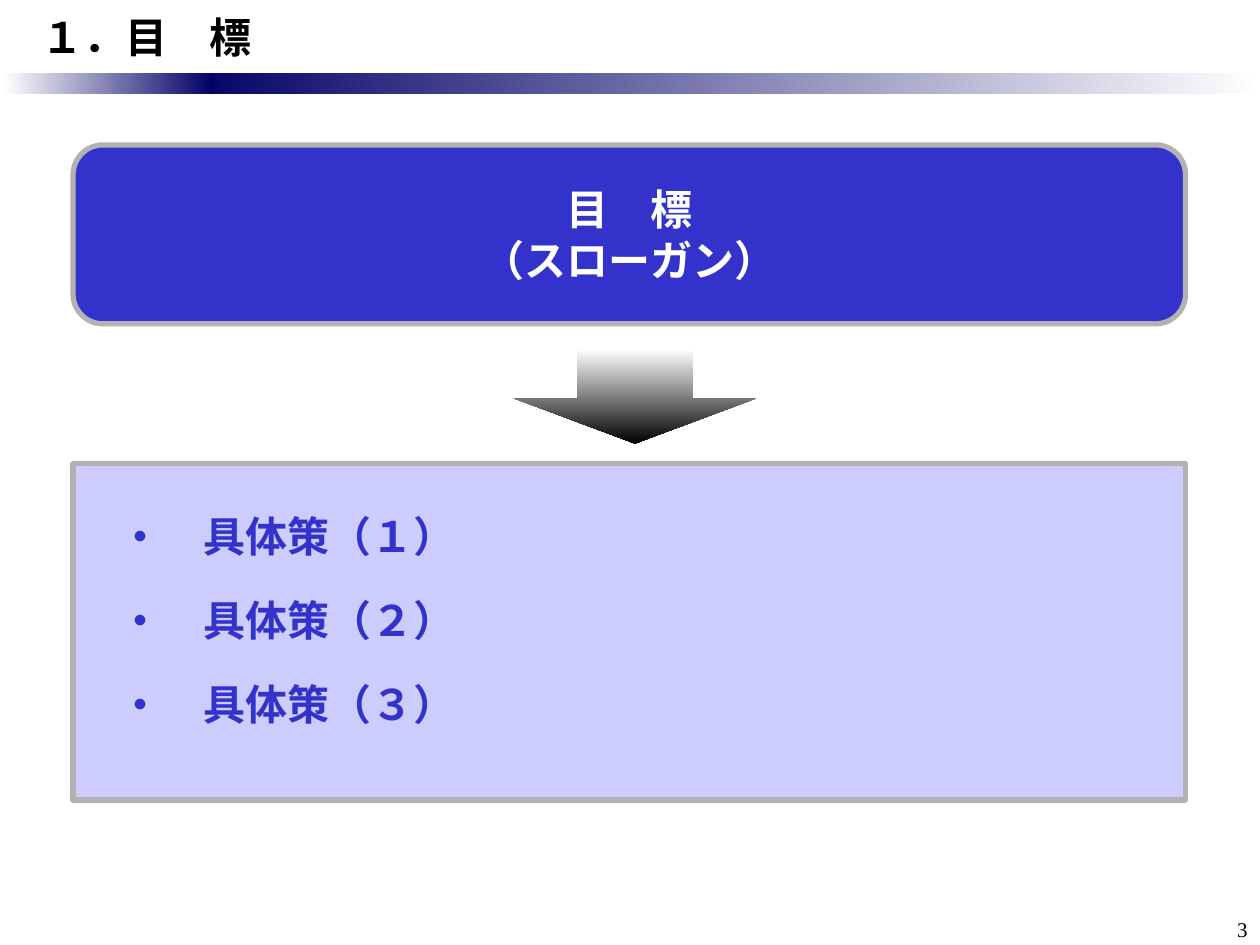
import pptx
import pptx.util
import pptx.dml.color
import pptx.enum.shapes
import pptx.enum.text
import pptx.oxml.ns
import lxml.etree

Inches = pptx.util.Inches
Points = pptx.util.Pt
Shapes = pptx.enum.shapes.MSO_SHAPE
Align = pptx.enum.text.PP_ALIGN
Anchor = pptx.enum.text.MSO_ANCHOR
JAPANESE = "Noto Sans CJK JP"
LATIN = "Times New Roman"


def color(value):
    return pptx.dml.color.RGBColor.from_string(value)


def write(shape, lines, text_color, size=24, font=JAPANESE, bold=True,
          align=Align.LEFT, anchor=Anchor.MIDDLE,
          insets=(0.1, 0.05, 0.1, 0.05), space_after=0):
    frame = shape.text_frame
    frame.word_wrap = True
    frame.vertical_anchor = anchor
    (frame.margin_left, frame.margin_top,
     frame.margin_right, frame.margin_bottom) = map(Inches, insets)
    frame.text = "\n".join(lines)
    for paragraph in frame.paragraphs:
        paragraph.alignment = align
        paragraph.space_after = Points(space_after)
        for run in paragraph.runs:
            run.font.name = font
            run.font.size = Points(size)
            run.font.bold = bold
            run.font.color.rgb = color(text_color)
            east_asian = lxml.etree.SubElement(
                run.font._element, pptx.oxml.ns.qn("a:ea"))
            east_asian.set("typeface", font)


def add_text(slide, box, lines, text_color, **style):
    shape = slide.shapes.add_textbox(*map(Inches, box))
    write(shape, lines, text_color, **style)


def add_panel(slide, kind, box, fill):
    shape = slide.shapes.add_shape(kind, *map(Inches, box))
    shape.shadow.inherit = False
    shape.fill.solid()
    shape.fill.fore_color.rgb = color(fill)
    shape.line.color.rgb = color("B2B2B2")
    shape.line.width = Points(3)
    return shape


def add_gradient(slide, kind, box, colors, angle):
    shape = slide.shapes.add_shape(kind, *map(Inches, box))
    shape.shadow.inherit = False
    shape.line.fill.background()
    shape.fill.gradient()
    shape.fill.gradient_angle = angle
    for stop, value in zip(shape.fill.gradient_stops, colors):
        stop.color.rgb = color(value)
    return shape


def add_header(slide, box, title):
    left, top, width, height = box
    bar_top = top + height
    add_gradient(slide, Shapes.RECTANGLE, (left + 1.42, bar_top, width - 1.42, 0.17),
                 ("000066", "FFFFFF"), 0)
    add_gradient(slide, Shapes.RECTANGLE, (left + 0.03, bar_top, 1.67, 0.17),
                 ("FFFFFF", "000066"), 0)
    add_text(slide, box, [title], "000000", insets=(0.33, 0.05, 0.1, 0.05))


def add_goal(slide, box, lines):
    panel = add_panel(slide, Shapes.ROUNDED_RECTANGLE, box, "3333CC")
    panel.adjustments[0] = 0.167
    write(panel, lines, "FFFFFF", align=Align.CENTER)


def add_arrow(slide, box):
    arrow = add_gradient(slide, Shapes.DOWN_ARROW, box, ("FFFFFF", "000000"), 270)
    arrow.adjustments[0] = 0.476
    arrow.adjustments[1] = 0.477


def add_measures(slide, box, lines):
    panel = add_panel(slide, Shapes.RECTANGLE, box, "CCCCFF")
    write(panel, lines, "3333CC", anchor=Anchor.TOP,
          insets=(0.37, 0.37, 0.1, 0.05), space_after=19.2)


def add_page_number(slide, box, number):
    add_text(slide, box, [number], "000000", size=12, font=LATIN, bold=False,
             align=Align.RIGHT, insets=(0, 0, 0.1, 0))


def main():
    presentation = pptx.Presentation()
    presentation.slide_width = Inches(10)
    presentation.slide_height = Inches(7.5)
    slide = presentation.slides.add_slide(presentation.slide_layouts[6])
    add_header(slide, (0, 0, 10, 0.58), "１．目　標")
    add_goal(slide, (0.58, 1.15, 8.83, 1.42), ["目　標", "（スローガン）"])
    add_arrow(slide, (4.08, 2.77, 1.92, 0.75))
    add_measures(slide, (0.58, 3.68, 8.83, 2.67),
                 [f"・　具体策（{digit}）" for digit in "１２３"])
    add_page_number(slide, (9.42, 7.25, 0.58, 0.25), "3")
    presentation.save("out.pptx")


if __name__ == "__main__":
    main()
